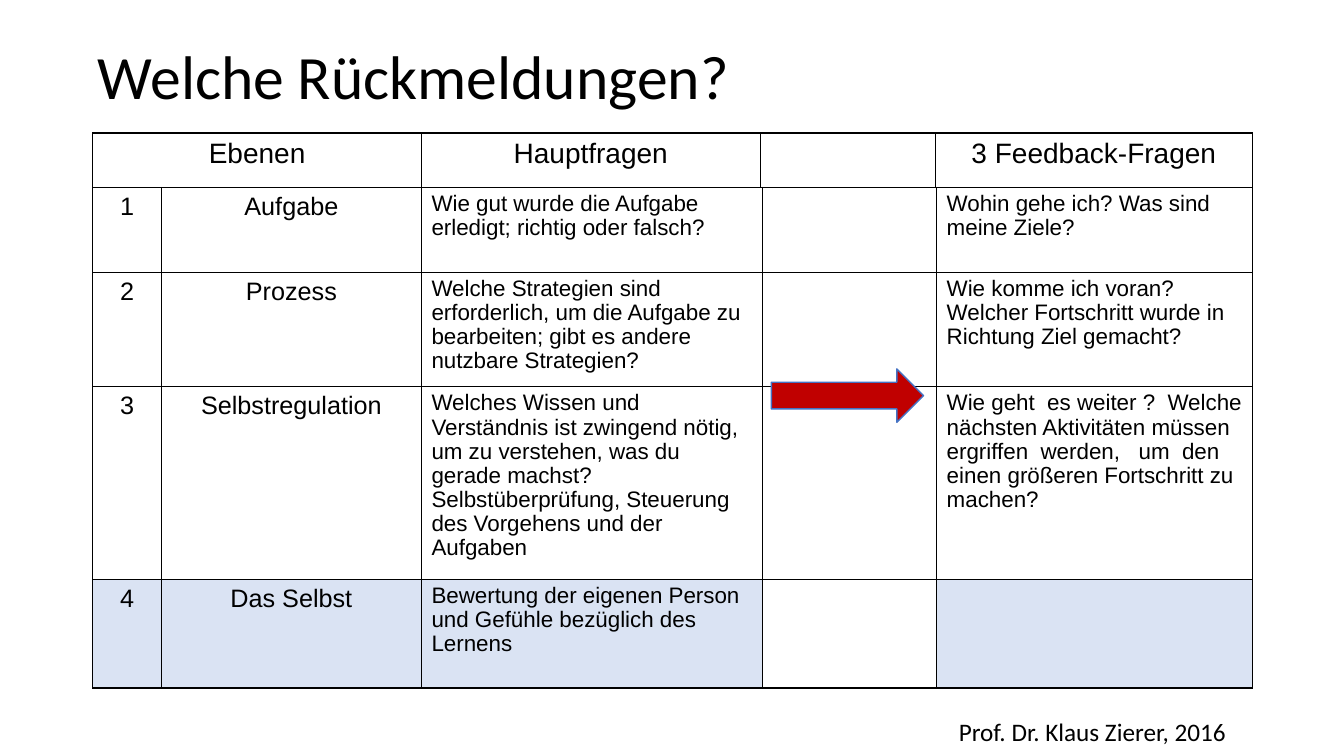
import pptx
import pptx.dml.color
import pptx.enum.shapes
import pptx.enum.text
import pptx.oxml
import pptx.oxml.ns
import pptx.util

PX = 9144  # 100 px per inch
BLACK, WHITE, PALE_BLUE = "000000", "FFFFFF", "DAE3F3"
CENTER = pptx.enum.text.PP_ALIGN.CENTER
LEFT = pptx.enum.text.PP_ALIGN.LEFT

HEADINGS = ["Ebenen", "Hauptfragen", "", "3 Feedback-Fragen"]
LEVELS = [
    ["1", "Aufgabe",
     "Wie gut wurde die Aufgabe\nerledigt; richtig oder falsch?", "",
     "Wohin gehe ich? Was sind\nmeine Ziele?"],
    ["2", "Prozess",
     "Welche Strategien sind\nerforderlich, um die Aufgabe zu\n"
     "bearbeiten; gibt es andere\nnutzbare Strategien?", "",
     "Wie komme ich voran?\nWelcher Fortschritt wurde in\nRichtung Ziel gemacht?"],
    ["3", "Selbstregulation",
     "Welches Wissen und Verständnis ist zwingend nötig, um zu verstehen, "
     "was du gerade machst? Selbstüberprüfung, Steuerung des Vorgehens "
     "und der Aufgaben", "",
     "Wie geht  es weiter ?  Welche nächsten Aktivitäten müssen "
     "ergriffen  werden,   um  den einen größeren Fortschritt zu machen?"],
    ["4", "Das Selbst",
     "Bewertung der eigenen Person und Gefühle bezüglich des Lernens", "", ""],
]


def color(value):
    return pptx.dml.color.RGBColor.from_string(value)


def scaled(*lengths):
    return [pptx.util.Emu(length * PX) for length in lengths]


def write(frame, text, size, font, align=LEFT, spacing=None):
    """Fill a text frame, one paragraph for each line of text."""
    for index, line in enumerate(text.split("\n")):
        para = frame.add_paragraph() if index else frame.paragraphs[0]
        para.alignment = align
        para.line_spacing = spacing
        span = para.add_run()
        span.text = line
        span.font.size = pptx.util.Pt(size)
        span.font.name = font
        span.font.color.rgb = color(BLACK)


def add_text(page, area, text, size, spacing=None):
    frame = page.shapes.add_textbox(*scaled(*area)).text_frame
    frame.word_wrap = True
    frame.vertical_anchor = pptx.enum.text.MSO_ANCHOR.MIDDLE
    frame.margin_left = frame.margin_right = pptx.util.Inches(0.05)
    write(frame, text, size, "Calibri", spacing=spacing)


def outline(cell):
    """Draw a black 1 pt border on all four sides of a cell."""
    properties = cell._tc.get_or_add_tcPr()
    for index, side in enumerate(("lnL", "lnR", "lnT", "lnB")):
        border = pptx.oxml.parse_xml(
            f'<a:{side} {pptx.oxml.ns.nsdecls("a")} w="12700"><a:solidFill>'
            f'<a:srgbClr val="{BLACK}"/></a:solidFill></a:{side}>')
        properties.insert(index, border)


def add_grid(page, left, top, widths, heights):
    area = scaled(left, top, sum(widths), sum(heights))
    table = page.shapes.add_table(len(heights), len(widths), *area).table
    table.first_row = table.horz_banding = False
    for column, width in zip(table.columns, scaled(*widths)):
        column.width = width
    for row, height in zip(table.rows, scaled(*heights)):
        row.height = height
    for cell in table.iter_cells():
        outline(cell)
    return table


def fill_cell(cell, text, fill, size, align=LEFT, spacing=None):
    cell.fill.solid()
    cell.fill.fore_color.rgb = color(fill)
    if text:
        write(cell.text_frame, text, size, "Arial", align, spacing)


def add_arrow(page, area):
    arrow = page.shapes.add_shape(
        pptx.enum.shapes.MSO_SHAPE.RIGHT_ARROW, *scaled(*area))
    arrow.shadow.inherit = False
    arrow.fill.solid()
    arrow.fill.fore_color.rgb = color("C00000")
    arrow.line.color.rgb = color("4472C4")
    arrow.line.width = pptx.util.Pt(1)


def main():
    deck = pptx.Presentation()
    deck.slide_width, deck.slide_height = scaled(1333, 750)
    page = deck.slides.add_slide(deck.slide_layouts[6])

    add_text(page, (92, 26, 1150, 106), "Welche Rückmeldungen?", 44, 0.9)

    header = add_grid(page, 92, 132, [326, 336, 174, 314], [54])
    for cell, heading in zip(header.iter_cells(), HEADINGS):
        fill_cell(cell, heading, WHITE, 20, CENTER)

    levels = add_grid(page, 92, 186, [68, 258, 338, 173, 313], [84, 108, 184, 108])
    for row, texts in enumerate(LEVELS):
        for column, text in enumerate(texts):
            shaded = row == 3 and column != 3
            style = (18, CENTER) if column < 2 else (16, LEFT, 0.97)
            fill_cell(levels.cell(row, column), text,
                      PALE_BLUE if shaded else WHITE, *style)

    add_arrow(page, (765, 366, 151, 53))
    add_text(page, (946, 706, 295, 40), "Prof. Dr. Klaus Zierer, 2016", 18)
    deck.save("out.pptx")


if __name__ == "__main__":
    main()
